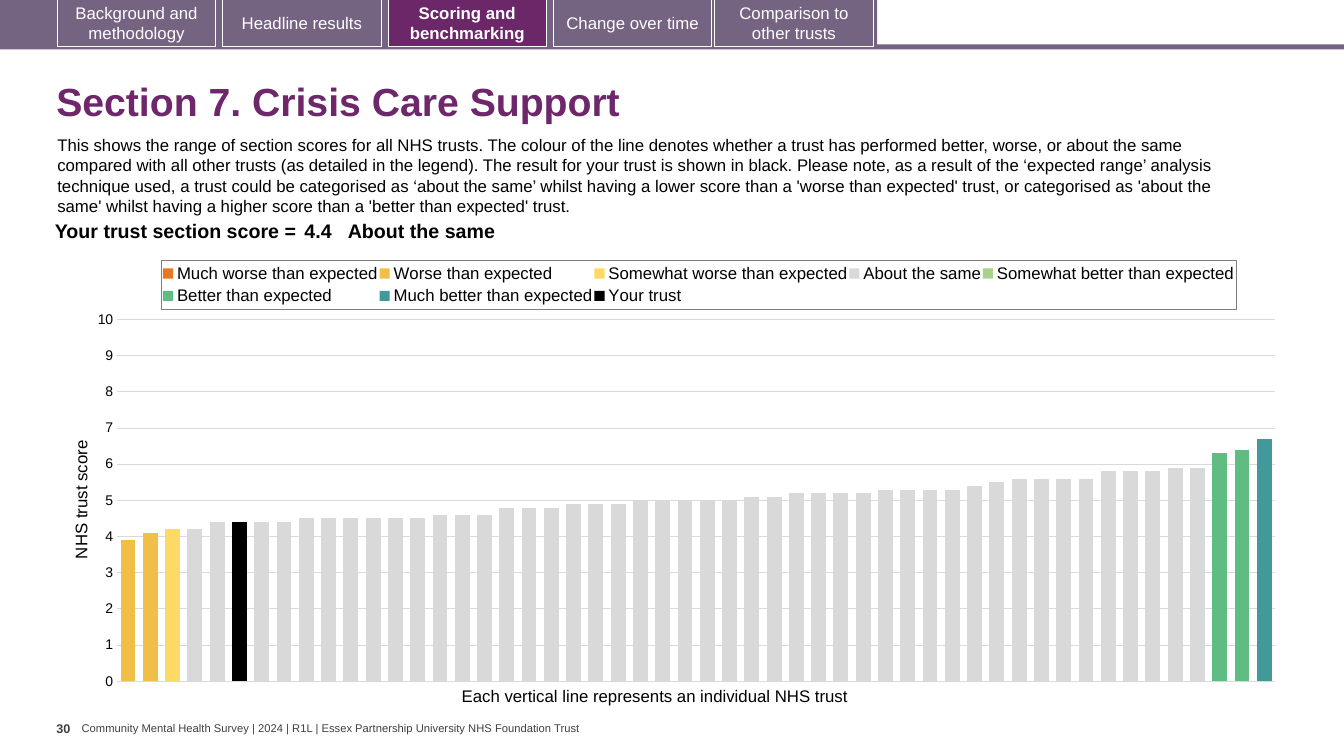
from copy import deepcopy

from pptx import Presentation
from pptx.chart.data import CategoryChartData
from pptx.dml.color import RGBColor
from pptx.enum.chart import XL_CHART_TYPE, XL_LEGEND_POSITION, XL_TICK_MARK
from pptx.enum.shapes import MSO_SHAPE
from pptx.enum.text import MSO_ANCHOR, PP_ALIGN
from pptx.oxml import parse_xml
from pptx.oxml.ns import nsdecls, qn
from pptx.util import Inches, Pt

COLUMN = XL_CHART_TYPE.COLUMN_CLUSTERED
LEGEND_TOP = XL_LEGEND_POSITION.TOP
NO_TICK = XL_TICK_MARK.NONE
RECT = MSO_SHAPE.RECTANGLE
TOP, MIDDLE = MSO_ANCHOR.TOP, MSO_ANCHOR.MIDDLE
LEFT, CENTER, RIGHT = PP_ALIGN.LEFT, PP_ALIGN.CENTER, PP_ALIGN.RIGHT

FONT = "Arial"
BLACK, WHITE, GREY = "000000", "FFFFFF", "404040"
PURPLE, MUTED = "6D276A", "756382"

TABS = [
    (0.57, "Background and methodology"),
    (2.21, "Headline results"),
    (3.85, "Scoring and benchmarking"),
    (5.49, "Change over time"),
    (7.09, "Comparison to other trusts"),
]
ACTIVE_TAB = "Scoring and benchmarking"

INTRO = (
    "This shows the range of section scores for all NHS trusts. The colour of the line "
    "denotes whether a trust has performed better, worse, or about the same compared with "
    "all other trusts (as detailed in the legend). The result for your trust is shown in "
    "black. Please note, as a result of the ‘expected range’ analysis technique used, a "
    "trust could be categorised as ‘about the same’ whilst having a lower score than a "
    "'worse than expected' trust, or categorised as 'about the same' whilst having a higher "
    "score than a 'better than expected' trust."
)

SCORE_CELLS = [
    ("Your trust section score =", 2.63, RIGHT, 0.04),
    ("4.4", 0.47, LEFT, 0.04),
    ("About the same", 8.59, LEFT, 0),
]

CHART_BOX = (0.67, 2.47, 12.15, 4.44)
TRUSTS = 52
SAME_SCORES = (
    [4.2] + [4.4] * 4 + [4.5] * 6 + [4.6] * 3 + [4.8] * 3 + [4.9] * 3 + [5] * 5
    + [5.1] * 2 + [5.2] * 4 + [5.3] * 4 + [5.4, 5.5] + [5.6] * 4 + [5.8] * 3 + [5.9] * 2
)
SERIES = [
    ("Much worse than expected", "E87722", 0, []),
    ("Worse than expected", "F1BE48", 0, [3.9, 4.1]),
    ("Somewhat worse than expected", "FFD966", 2, [4.2]),
    ("About the same", "D9D9D9", 3, SAME_SCORES),
    ("Somewhat better than expected", "A9D18E", 49, []),
    ("Better than expected", "5FBD83", 49, [6.3, 6.4]),
    ("Much better than expected", "419999", 51, [6.7]),
    ("Your trust", BLACK, 5, [4.4]),
]
RIGHT_AXES = f"""<c:plotArea {nsdecls("c", "a")}>
<c:valAx><c:axId val="902"/><c:scaling><c:orientation val="minMax"/><c:max val="10"/>
<c:min val="0"/></c:scaling><c:delete val="0"/><c:axPos val="r"/>
<c:majorTickMark val="out"/><c:minorTickMark val="none"/><c:tickLblPos val="none"/>
<c:spPr><a:ln><a:noFill/></a:ln></c:spPr><c:crossAx val="901"/><c:crosses val="max"/></c:valAx>
<c:catAx><c:axId val="901"/><c:scaling><c:orientation val="minMax"/></c:scaling>
<c:delete val="1"/><c:axPos val="b"/><c:majorTickMark val="none"/>
<c:minorTickMark val="none"/><c:tickLblPos val="nextTo"/><c:crossAx val="902"/>
<c:crosses val="autoZero"/></c:catAx></c:plotArea>"""


def rgb(value):
    """Return the colour for a hex string."""
    return RGBColor.from_string(value)


def style_font(font, size, color=BLACK, bold=False):
    """Apply the slide typeface to a font."""
    font.name = FONT
    font.size = Pt(size)
    font.bold = bold
    font.color.rgb = rgb(color)


def add_text(slide, box, text, size, color=BLACK, bold=False, wrap=True,
             anchor=TOP, insets=(0.1, 0.05), spacing=None):
    """Add a text box with one paragraph."""
    tf = slide.shapes.add_textbox(*map(Inches, box)).text_frame
    tf.word_wrap = wrap
    tf.vertical_anchor = anchor
    tf.margin_left = tf.margin_right = Inches(insets[0])
    tf.margin_top = tf.margin_bottom = Inches(insets[1])
    p = tf.paragraphs[0]
    p.text = text
    if spacing:
        p.line_spacing = spacing
    style_font(p.runs[0].font, size, color, bold)


def add_rect(slide, box, fill):
    """Add a plain filled rectangle."""
    sp = slide.shapes.add_shape(RECT, *map(Inches, box))
    sp.shadow.inherit = False
    sp.fill.solid()
    sp.fill.fore_color.rgb = rgb(fill)
    sp.line.fill.background()
    return sp


def add_tab(slide, left, label):
    """Add a navigation tab, highlighted when it is the active one."""
    active = label == ACTIVE_TAB
    sp = add_rect(slide, (left, -0.01, 1.57, 0.47), "6B2768" if active else MUTED)
    sp.line.color.rgb = rgb(WHITE)
    sp.line.width = Pt(0.75)
    tf = sp.text_frame
    tf.word_wrap = True
    tf.vertical_anchor = MIDDLE
    p = tf.paragraphs[0]
    p.text = label
    p.alignment = CENTER
    style_font(p.runs[0].font, 12, WHITE, active)


def add_score_table(slide):
    """Add the one-row table with the trust's section score."""
    frame = slide.shapes.add_table(1, len(SCORE_CELLS), *map(Inches, (0.35, 2.15, 11.69, 0.31)))
    table = frame.table
    table.first_row = table.horz_banding = False
    for i, (text, width, align, inset) in enumerate(SCORE_CELLS):
        table.columns[i].width = Inches(width)
        cell = table.cell(0, i)
        cell.fill.background()
        cell.margin_left = cell.margin_right = Inches(inset)
        cell.margin_top = cell.margin_bottom = Inches(0.04)
        p = cell.text_frame.paragraphs[0]
        p.text = text
        p.alignment = align
        style_font(p.runs[0].font, 14, bold=True)


def set_layout(element, index, left, top, size=None, target=None):
    """Place a chart element by its slide position in inches."""
    for old in element.findall(qn("c:layout")):
        element.remove(old)
    x, y, width, height = CHART_BOX
    edges = {"x": (left - x) / width, "y": (top - y) / height}
    if size:
        edges.update(w=size[0] / width, h=size[1] / height)
    inner = f'<c:layoutTarget val="{target}"/>' if target else ""
    inner += '<c:xMode val="edge"/><c:yMode val="edge"/>'
    inner += "".join(f'<c:{key} val="{value:.4f}"/>' for key, value in edges.items())
    element.insert(index, parse_xml(
        f'<c:layout {nsdecls("c")}><c:manualLayout>{inner}</c:manualLayout></c:layout>'))


def style_value_axis(axis):
    """Format the score axis, its gridlines and its title."""
    axis.minimum_scale, axis.maximum_scale, axis.major_unit = 0, 10, 1
    axis.major_tick_mark = axis.minor_tick_mark = NO_TICK
    axis.format.line.fill.background()
    style_font(axis.tick_labels.font, 10)
    grid = axis.major_gridlines.format.line
    grid.color.rgb = rgb("D9D9D9")
    grid.width = Pt(0.75)
    p = axis.axis_title.text_frame.paragraphs[0]
    p.text = "NHS trust score"
    style_font(p.runs[0].font, 12)
    set_layout(axis.axis_title._element, 1, 0.67, 4.34)


def style_legend(legend):
    """Format the boxed legend above the plot."""
    legend.position = LEGEND_TOP
    legend.include_in_layout = False
    style_font(legend.font, 12)
    element = legend._element
    set_layout(element, 1, 1.6, 2.58, (10.66, 0.49))
    element.find(qn("c:overlay")).addnext(parse_xml(
        f'<c:spPr {nsdecls("c", "a")}><a:ln w="9525"><a:solidFill>'
        '<a:srgbClr val="7F7F7F"/></a:solidFill></a:ln></c:spPr>'))


def move_last_series_right(plot_area):
    """Put the last series on a second, unlabelled axis."""
    bars = plot_area.find(qn("c:barChart"))
    right = deepcopy(bars)
    bars.remove(bars.findall(qn("c:ser"))[-1])
    for ser in right.findall(qn("c:ser"))[:-1]:
        right.remove(ser)
    for ax_id, number in zip(right.findall(qn("c:axId")), ("901", "902")):
        ax_id.set("val", number)
    bars.addnext(right)
    last_axis = plot_area.findall(qn("c:valAx"))[-1]
    for axis in reversed(list(parse_xml(RIGHT_AXES))):
        last_axis.addnext(axis)


def add_score_chart(slide):
    """Add the column chart of section scores by trust."""
    data = CategoryChartData()
    data.categories = [str(n) for n in range(1, TRUSTS + 1)]
    for name, _, start, scores in SERIES:
        data.add_series(name, [None] * start + scores + [None] * (TRUSTS - start - len(scores)))
    chart = slide.shapes.add_chart(COLUMN, *map(Inches, CHART_BOX), data).chart
    style_font(chart.font, 10)
    chart.has_title = False
    plot = chart.plots[0]
    plot.vary_by_categories = False
    plot.gap_width, plot.overlap = 50, 100
    for series, (_, color, _, _) in zip(plot.series, SERIES):
        series.format.fill.solid()
        series.format.fill.fore_color.rgb = rgb(color)
    chart.category_axis.visible = False
    style_value_axis(chart.value_axis)
    chart.has_legend = True
    style_legend(chart.legend)
    plot_area = chart._chartSpace.chart.plotArea
    set_layout(plot_area, 0, 1.16, 3.17, (11.49, 3.59), "inner")
    move_last_series_right(plot_area)


def main():
    """Build the slide and save it."""
    prs = Presentation()
    prs.slide_width, prs.slide_height = Inches(13.33), Inches(7.5)
    slide = prs.slides.add_slide(prs.slide_layouts[6])
    add_rect(slide, (0, 0.44, 13.33, 0.05), MUTED)
    add_rect(slide, (0, 0, 8.7, 0.47), MUTED)
    for left, label in TABS:
        add_tab(slide, left, label)
    add_text(slide, (0.46, 0.67, 12.49, 0.72), "Section 7. Crisis Care Support", 28,
             PURPLE, True, anchor=MIDDLE, spacing=0.9)
    add_text(slide, (0.47, 1.29, 12.13, 0.91), INTRO, 12)
    add_score_chart(slide)
    add_score_table(slide)
    add_text(slide, (4.48, 6.75, 4.11, 0.3),
             "Each vertical line represents an individual NHS trust", 12, wrap=False)
    add_text(slide, (0.56, 7.1, 0.25, 0.4), "30", 9, GREY, True, False, insets=(0, 0.05))
    add_text(slide, (0.81, 7.16, 5.01, 0.13),
             "Community Mental Health Survey | 2024 | R1L | "
             "Essex Partnership University NHS Foundation Trust",
             8, GREY, wrap=False, anchor=MIDDLE, insets=(0, 0))
    prs.save("out.pptx")


if __name__ == "__main__":
    main()
